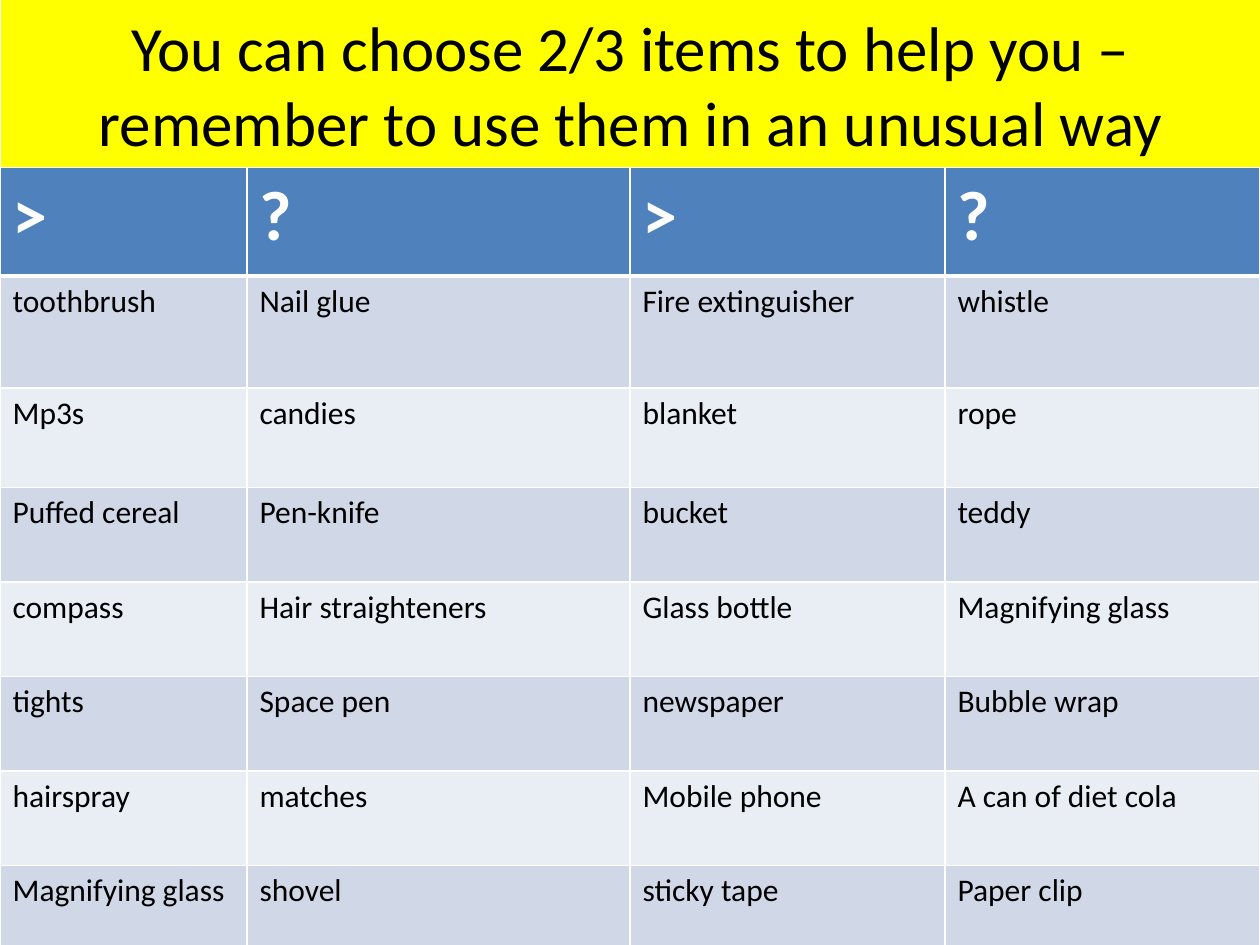
from dataclasses import dataclass

from lxml import etree
from pptx import Presentation
from pptx.dml.color import RGBColor
from pptx.enum import text
from pptx.oxml import ns
from pptx.util import Inches, Pt


@dataclass
class Theme:
    font: str = "Calibri"
    banner: str = "FFFF00"
    ink: str = "000000"
    header: str = "4F81BD"
    header_ink: str = "FFFFFF"
    bands: tuple = ("D0D8E8", "E9EDF4")
    rule: str = "FFFFFF"
    title_size: int = 36
    header_size: int = 40
    item_size: int = 18


theme = Theme()


def add_run(paragraph, words, size, color, bold=False):
    run = paragraph.add_run()
    run.text = words
    run.font.name = theme.font
    run.font.size = Pt(size)
    run.font.bold = bold
    run.font.color.rgb = RGBColor.from_string(color)


def add_borders(cell, widths):
    """Put the lines, given in points by side, ahead of the cell's fill."""
    properties = cell._tc.get_or_add_tcPr()
    for position, (side, width) in enumerate(widths.items()):
        line = etree.Element(ns.qn(f"a:ln{side}"), w=str(Pt(width)))
        fill = etree.SubElement(line, ns.qn("a:solidFill"))
        etree.SubElement(fill, ns.qn("a:srgbClr"), val=theme.rule)
        properties.insert(position, line)


deck = Presentation()
deck.slide_width, deck.slide_height = Inches(10), Inches(7.5)
slide = deck.slides.add_slide(deck.slide_layouts[5])

# Title banner
banner = slide.shapes.title
banner.left, banner.top = Inches(0.01), Inches(0)
banner.width, banner.height = Inches(9.99), Inches(1.33)
banner.fill.solid()
banner.fill.fore_color.rgb = RGBColor.from_string(theme.banner)
heading = banner.text_frame
heading.word_wrap = True
heading.auto_size = text.MSO_AUTO_SIZE.NONE
heading.vertical_anchor = text.MSO_ANCHOR.MIDDLE
heading.paragraphs[0].alignment = text.PP_ALIGN.CENTER
add_run(heading.paragraphs[0],
        "You can choose 2/3 items to help you – remember to use them in an unusual way",
        theme.title_size, theme.ink)

# Items to choose from
items = [
    (">", "?", ">", "?"),
    ("toothbrush", "Nail glue", "Fire extinguisher", "whistle"),
    ("Mp3s", "candies", "blanket", "rope"),
    ("Puffed cereal", "Pen-knife", "bucket", "teddy"),
    ("compass", "Hair straighteners", "Glass bottle", "Magnifying glass"),
    ("tights", "Space pen", "newspaper", "Bubble wrap"),
    ("hairspray", "matches", "Mobile phone", "A can of diet cola"),
    ("Magnifying glass", "shovel", "sticky tape", "Paper clip"),
]
column_widths = [1.96, 3.04, 2.5, 2.5]
row_heights = [0.86, 0.89, 0.79] + [0.75] * 4 + [0.77]

choices = slide.shapes.add_table(
    len(items), len(column_widths), Inches(0), Inches(1.33),
    Inches(sum(column_widths)), Inches(sum(row_heights))).table
for column, width in zip(choices.columns, column_widths):
    column.width = Inches(width)
for row, height in zip(choices.rows, row_heights):
    row.height = Inches(height)

for r, names in enumerate(items):
    is_header = r == 0
    for c, name in enumerate(names):
        cell = choices.cell(r, c)
        cell.fill.solid()
        cell.fill.fore_color.rgb = RGBColor.from_string(
            theme.header if is_header else theme.bands[(r - 1) % 2])
        # A thick rule parts the header from the items
        add_borders(cell, {"L": 1, "R": 1, "T": 3 if r == 1 else 1,
                           "B": 3 if is_header else 1})
        add_run(cell.text_frame.paragraphs[0], name,
                theme.header_size if is_header else theme.item_size,
                theme.header_ink if is_header else theme.ink, is_header)

deck.save("out.pptx")
